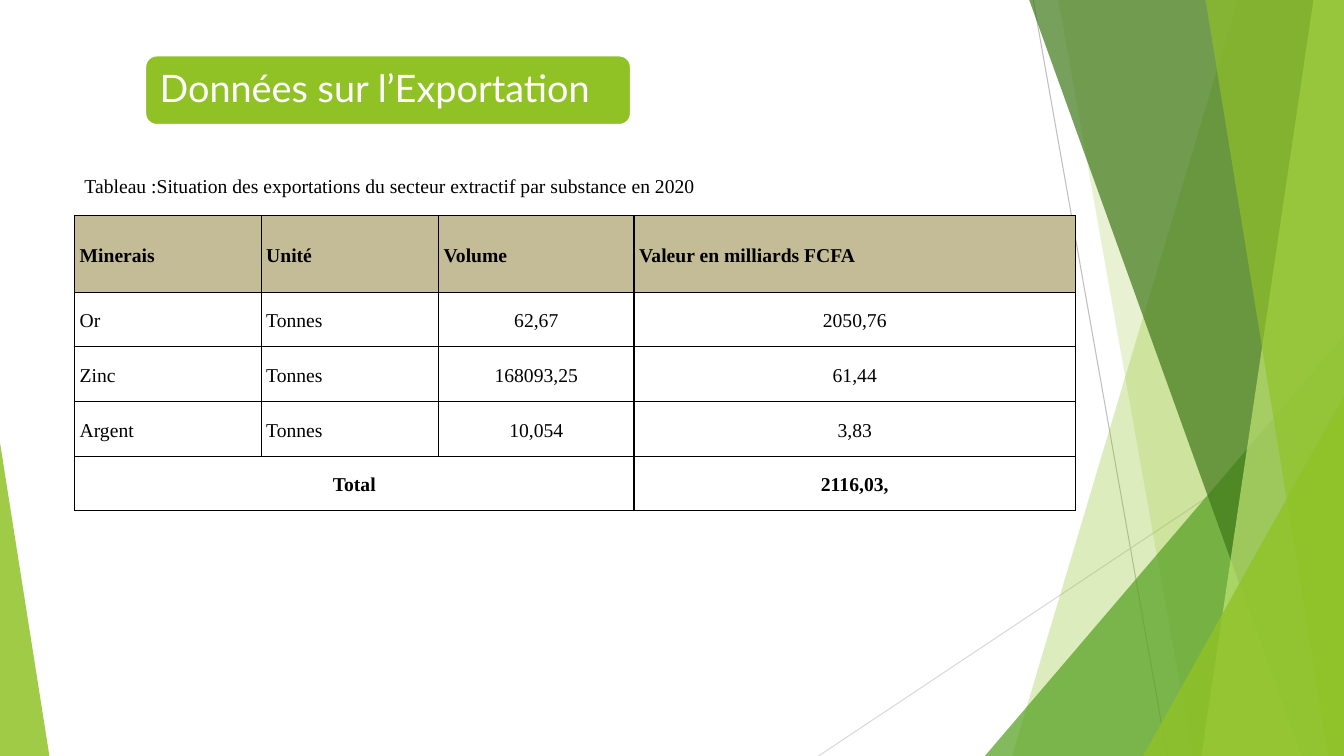
from lxml import etree
from pptx import Presentation, util as u
from pptx.dml.color import RGBColor
from pptx.enum import shapes, text
from pptx.oxml import ns, parse_xml

WIDTH, HEIGHT = u.Inches(13.333), u.Inches(7.5)

GREEN = RGBColor(0x90, 0xC2, 0x26)
MID_GREEN = RGBColor(0x54, 0xA0, 0x21)
DARK_GREEN = RGBColor(0x3F, 0x78, 0x19)
PALE_GREEN = RGBColor(0xC0, 0xE4, 0x74)
GREY = RGBColor(0xBF, 0xBF, 0xBF)
LIGHT_GREY = RGBColor(0xD9, 0xD9, 0xD9)
SAND = RGBColor(0xC4, 0xBC, 0x96)
BLACK = RGBColor(0, 0, 0)
WHITE = RGBColor(0xFF, 0xFF, 0xFF)
SERIF = "Times New Roman"

MINERALS = [
    ["Minerais", "Unité", "Volume", "Valeur en milliards FCFA"],
    ["Or", "Tonnes", "62,67", "2050,76"],
    ["Zinc", "Tonnes", "168093,25", "61,44"],
    ["Argent", "Tonnes", "10,054", "3,83"],
    ["Total", "", "", "2116,03,"],
]
COLUMN_SHARES = [13.88, 13.2, 14.55, 32.85]
ROW_SHARES = [10.13] + [7.23] * 4


# Lengths are percentages of the slide's width and height
def across(share):
    return u.Emu(round(WIDTH * share / 100))


def down(share):
    return u.Emu(round(HEIGHT * share / 100))


def frame(left, top, width, height):
    return across(left), down(top), across(width), down(height)


def paint(shape, color, opacity=100):
    shape.shadow.inherit = False
    shape.line.fill.background()
    shape.fill.solid()
    shape.fill.fore_color.rgb = color
    if opacity < 100:
        tint = shape._element.spPr.find(".//" + ns.qn("a:srgbClr"))
        etree.SubElement(tint, ns.qn("a:alpha"), val=str(opacity * 1000))


def style(para, font_name, size, color, bold=False):
    para.font.name = font_name
    para.font.size = u.Pt(size)
    para.font.color.rgb = color
    para.font.bold = bold


def add_hairline(page, start, end, color):
    line = page.shapes.add_connector(
        shapes.MSO_CONNECTOR.STRAIGHT,
        across(start[0]), down(start[1]), across(end[0]), down(end[1]))
    line.line.color.rgb = color
    line.line.width = u.Pt(0.75)
    etree.SubElement(line._element.spPr, ns.qn("a:effectLst"))


def add_band(page, top_x, bottom_x, color, opacity):
    """Full-height band with a slanted left side, ending at the right edge."""
    builder = page.shapes.build_freeform(across(top_x), 0)
    builder.add_line_segments([(WIDTH, 0), (WIDTH, HEIGHT), (across(bottom_x), HEIGHT)])
    paint(builder.convert_to_shape(), color, opacity)


def add_corner(page, left, top, width, apex, color, opacity):
    """Right triangle standing on the bottom edge."""
    corner = page.shapes.add_shape(
        shapes.MSO_SHAPE.ISOSCELES_TRIANGLE, *frame(left, top, width, 100 - top))
    corner.adjustments[0] = apex
    paint(corner, color, opacity)


def add_backdrop(page):
    add_hairline(page, (76.88, 0), (86.85, 100), GREY)
    add_hairline(page, (100, 53.73), (60.9, 100), LIGHT_GREY)
    add_band(page, 92.1, 75.3, GREEN, 30)
    add_band(page, 78.75, 88.73, GREEN, 20)
    add_corner(page, 73.28, 44.4, 26.72, 1, MID_GREEN, 72)
    add_band(page, 76.58, 96.83, DARK_GREEN, 70)
    add_band(page, 97.73, 89.4, PALE_GREEN, 70)
    add_band(page, 89.7, 98.85, GREEN, 65)
    add_corner(page, 85.05, 52.4, 14.95, 1, GREEN, 80)
    add_corner(page, 0, 58.53, 3.68, 0, GREEN, 85)


def add_title(page, title):
    box = page.shapes.add_shape(
        shapes.MSO_SHAPE.ROUNDED_RECTANGLE, *frame(10.8, 7.33, 36.15, 9.2))
    paint(box, GREEN)
    box.line.color.rgb = WHITE
    box.line.width = u.Pt(1.5)
    body = box.text_frame
    body.margin_left = body.margin_right = across(0.83)
    body.vertical_anchor = text.MSO_ANCHOR.MIDDLE
    para = body.paragraphs[0]
    para.text = title
    para.alignment = text.PP_ALIGN.LEFT
    para.line_spacing = 0.9
    style(para, "Lato", 27, WHITE)


def add_caption(page, caption):
    box = page.shapes.add_textbox(*frame(5.55, 22.4, 87.6, 42.93))
    box.text_frame.word_wrap = True
    para = box.text_frame.paragraphs[0]
    para.text = caption
    style(para, SERIF, 14, BLACK)


def add_borders(cell):
    properties = cell._tc.get_or_add_tcPr()
    for side in ("lnL", "lnR", "lnT", "lnB"):
        properties.append(parse_xml(
            f'<a:{side} {ns.nsdecls("a")} w="12700"><a:solidFill>'
            f'<a:srgbClr val="{BLACK}"/></a:solidFill></a:{side}>'))


def fill_cell(cell, value, header, bold, centred):
    add_borders(cell)
    if header:
        cell.fill.solid()
        cell.fill.fore_color.rgb = SAND
    else:
        cell.fill.background()
    cell.margin_left = cell.margin_right = u.Inches(0.05)
    cell.margin_top = cell.margin_bottom = 0
    cell.vertical_anchor = text.MSO_ANCHOR.MIDDLE
    para = cell.text_frame.paragraphs[0]
    para.text = value
    para.alignment = text.PP_ALIGN.CENTER if centred else text.PP_ALIGN.JUSTIFY
    para.line_spacing = 1.15
    style(para, SERIF, 14, BLACK, bold)


def add_export_table(page, rows):
    table = page.shapes.add_table(
        len(rows), len(COLUMN_SHARES),
        *frame(5.55, 28.53, sum(COLUMN_SHARES), sum(ROW_SHARES))).table
    table.first_row = table.horz_banding = False
    for column, share in zip(table.columns, COLUMN_SHARES):
        column.width = across(share)
    for row, share in zip(table.rows, ROW_SHARES):
        row.height = down(share)
    last = len(rows) - 1
    for r, values in enumerate(rows):
        for c, value in enumerate(values):
            centred = r == last or (r > 0 and c >= 2)
            fill_cell(table.cell(r, c), value, r == 0, r in (0, last), centred)
    table.cell(last, 0).merge(table.cell(last, 2))


def main():
    deck = Presentation()
    deck.slide_width, deck.slide_height = WIDTH, HEIGHT
    page = deck.slides.add_slide(deck.slide_layouts[6])
    add_backdrop(page)
    add_title(page, "Données sur l’Exportation")
    add_caption(page, "Tableau :Situation des exportations du secteur extractif "
                      "par substance en 2020")
    add_export_table(page, MINERALS)
    deck.save("out.pptx")


if __name__ == "__main__":
    main()
